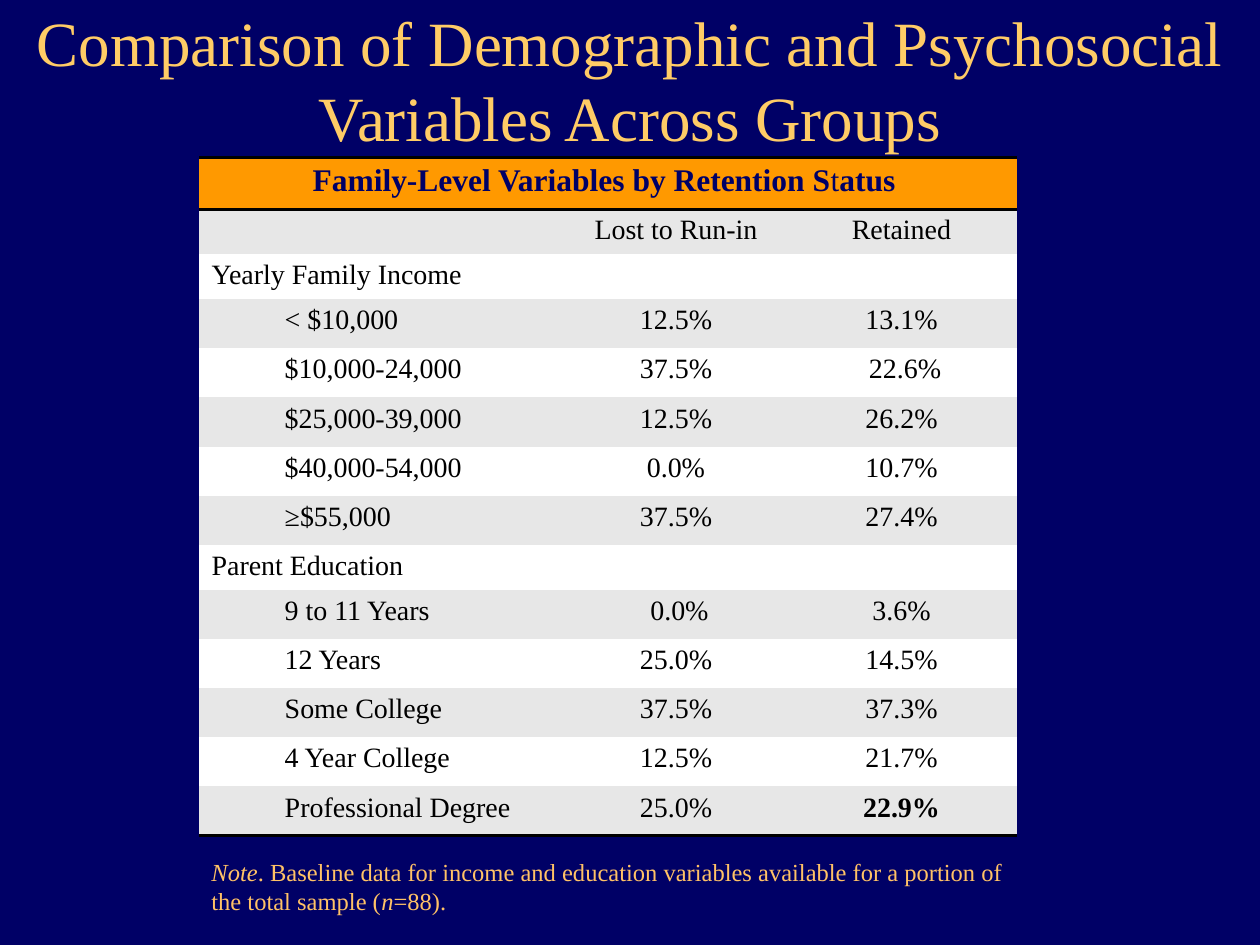
import pptx
import pptx.util
import pptx.dml.color
import pptx.enum.text
import pptx.oxml.ns
import lxml.etree

FONT = "Times New Roman"
COLORS = {
    "background": "000066", "title": "FFCC66", "note": "FFC266",
    "header": "FF9900", "band": "E7E7E7", "plain": "FFFFFF", "ink": "000000",
}
TITLE = [("Comparison of Demographic and Psychosocial Variables Across Groups", "")]
HEADING = [("Family-Level Variables by Retention S", "b"), ("t", ""), ("atus ", "b")]
GROUPS = ["Lost to Run-in", "Retained"]
SECTIONS = {
    "Yearly Family Income": [
        ("< $10,000", "12.5%", "13.1%"),
        ("$10,000-24,000", "37.5%", " 22.6%"),
        ("$25,000-39,000", "12.5%", "26.2%"),
        ("$40,000-54,000", "0.0%", "10.7%"),
        ("≥$55,000", "37.5%", "27.4%"),
    ],
    "Parent Education": [
        ("9 to 11 Years", " 0.0%", "3.6%"),
        ("12 Years", "25.0%", "14.5%"),
        ("Some College", "37.5%", "37.3%"),
        ("4 Year College", "12.5%", "21.7%"),
        ("Professional Degree", "25.0%", "22.9%"),
    ],
}
BOLD_VALUE = "22.9%"
NOTE = [
    ("Note", "i"),
    (". Baseline data for income and education variables available for a portion of the total sample (", ""),
    ("n", "i"), ("=88).", ""),
]
COLUMN_WIDTHS = [0.58, 2.33, 1.75, 1.83]
HEADER_HEIGHT, ROW_HEIGHT = 0.41, 0.3
TABLE_LEFT, TABLE_TOP, TABLE_WIDTH = 1.58, 1.25, 6.5
NO_STYLE = "{2D5ABB26-0587-4C30-8999-92F81FD0307C}"

Inches, Pt = pptx.util.Inches, pptx.util.Pt
LEFT = pptx.enum.text.PP_ALIGN.LEFT
CENTER = pptx.enum.text.PP_ALIGN.CENTER
qn = pptx.oxml.ns.qn


def rgb(name):
    return pptx.dml.color.RGBColor.from_string(COLORS[name])


def write(frame, runs, size, color, alignment):
    paragraph = frame.paragraphs[0]
    paragraph.alignment = alignment
    for text, style in runs:
        run = paragraph.add_run()
        run.text = text
        run.font.name = FONT
        run.font.size = Pt(size)
        run.font.bold = style == "b"
        run.font.italic = style == "i"
        run.font.color.rgb = rgb(color)
    if not runs:
        end = lxml.etree.SubElement(paragraph._p, qn("a:endParaRPr"), sz=str(size * 100))
        lxml.etree.SubElement(end, qn("a:latin"), typeface=FONT)


def add_text(slide, box, runs, size, color, alignment, anchor):
    shape = slide.shapes.add_textbox(*map(Inches, box))
    frame = shape.text_frame
    frame.word_wrap = True
    frame.vertical_anchor = anchor
    write(frame, runs, size, color, alignment)


def add_border(cell, side):
    line = lxml.etree.SubElement(cell._tc.get_or_add_tcPr(), qn("a:" + side), w=str(Pt(2)))
    fill = lxml.etree.SubElement(line, qn("a:solidFill"))
    lxml.etree.SubElement(fill, qn("a:srgbClr"), val=COLORS["ink"])


def table_rows():
    rows = [["", "", *GROUPS]]
    for section, details in SECTIONS.items():
        rows.append([section, "", "", ""])
        rows.extend(["", *detail] for detail in details)
    return rows


def style_cell(cell, fill, borders):
    cell.margin_top = cell.margin_bottom = Pt(3.25)
    for side in borders:
        add_border(cell, side)
    cell.fill.solid()
    cell.fill.fore_color.rgb = rgb(fill)


def add_comparison_table(slide):
    rows = table_rows()
    height = HEADER_HEIGHT + ROW_HEIGHT * len(rows)
    frame = slide.shapes.add_table(
        len(rows) + 1, len(COLUMN_WIDTHS),
        *map(Inches, (TABLE_LEFT, TABLE_TOP, TABLE_WIDTH, height)))
    table = frame.table
    table.first_row = table.horz_banding = False
    table._tbl.tblPr.find(qn("a:tableStyleId")).text = NO_STYLE
    for column, width in zip(table.columns, COLUMN_WIDTHS):
        column.width = Inches(width)
    for index, row in enumerate(table.rows):
        row.height = Inches(ROW_HEIGHT if index else HEADER_HEIGHT)

    for cell in table.rows[0].cells:
        style_cell(cell, "header", ["lnT", "lnB"])
    table.cell(0, 0).merge(table.cell(0, len(COLUMN_WIDTHS) - 1))
    write(table.cell(0, 0).text_frame, HEADING, 18, "background", CENTER)

    for row_index, values in enumerate(rows, 1):
        is_detail = values[1] != ""
        for column_index, text in enumerate(values):
            cell = table.cell(row_index, column_index)
            style_cell(cell, "band" if row_index % 2 else "plain",
                       ["lnB"] if row_index == len(rows) else [])
            runs = [(text, "b" if text == BOLD_VALUE else "")] if text else []
            size = 18 if is_detail and column_index == 0 else 16
            write(cell.text_frame, runs, size, "ink", LEFT if column_index < 2 else CENTER)
        if not is_detail:
            table.cell(row_index, 0).merge(table.cell(row_index, 1))


def main():
    presentation = pptx.Presentation()
    presentation.slide_width, presentation.slide_height = Inches(10), Inches(7.5)
    slide = presentation.slides.add_slide(presentation.slide_layouts[6])
    slide.background.fill.solid()
    slide.background.fill.fore_color.rgb = rgb("background")
    anchors = pptx.enum.text.MSO_ANCHOR
    add_text(slide, (0, 0, 10, TABLE_TOP), TITLE, 36, "title", CENTER, anchors.MIDDLE)
    add_comparison_table(slide)
    add_text(slide, (TABLE_LEFT, 6.75, TABLE_WIDTH, 0.57), NOTE, 14, "note", LEFT, anchors.TOP)
    presentation.save("out.pptx")


if __name__ == "__main__":
    main()
